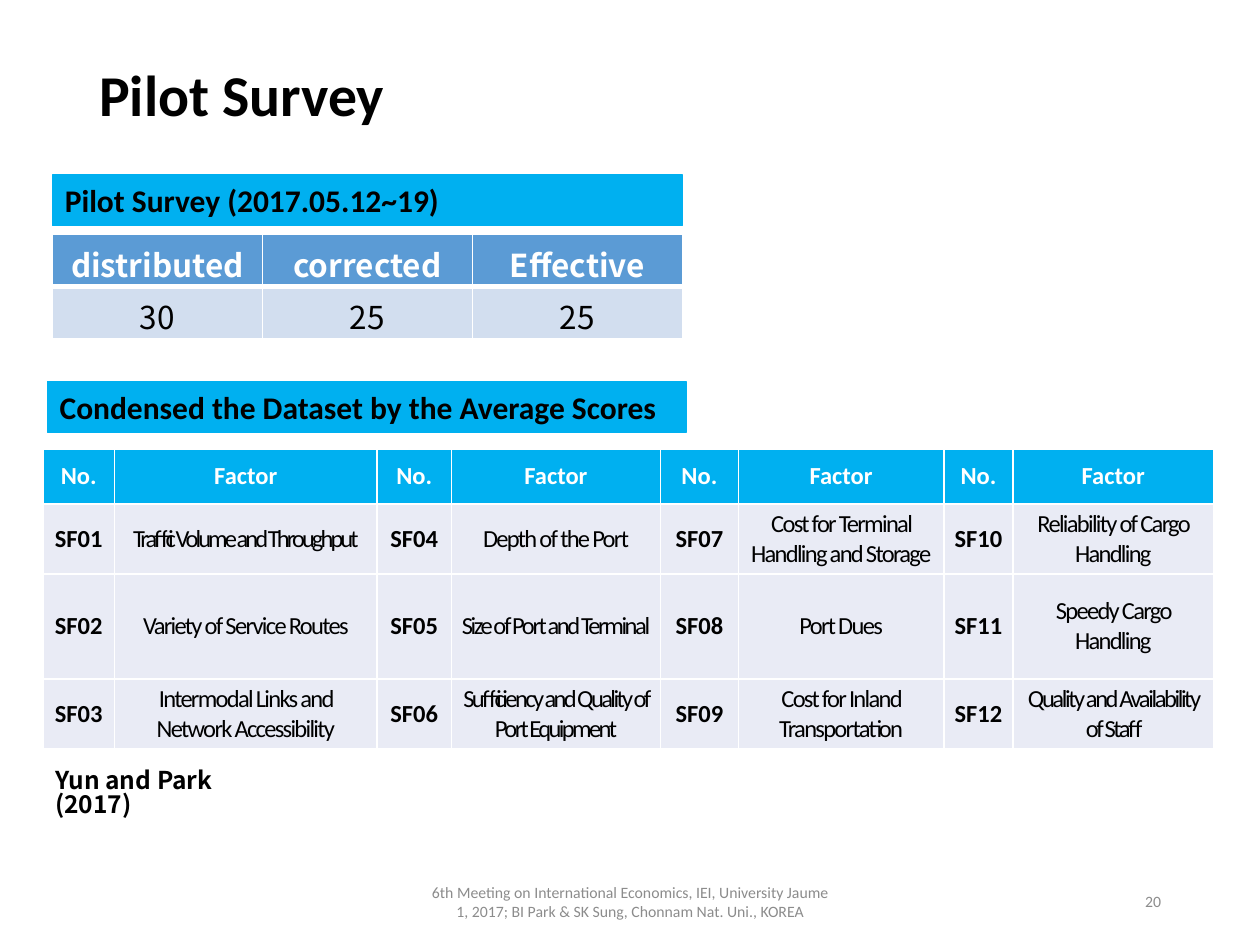
import dataclasses
import typing

import lxml.etree
import pptx
import pptx.dml.color
import pptx.enum.shapes
import pptx.enum.text
import pptx.oxml.ns
import pptx.util

Pt = pptx.util.Pt
RGBColor = pptx.dml.color.RGBColor
Align = pptx.enum.text.PP_ALIGN
Anchor = pptx.enum.text.MSO_ANCHOR

BLACK = RGBColor(0x00, 0x00, 0x00)
WHITE = RGBColor(0xFF, 0xFF, 0xFF)
GREY = RGBColor(0x8C, 0x8C, 0x8C)
CYAN = RGBColor(0x00, 0xB0, 0xF0)
LAVENDER = RGBColor(0xE9, 0xEB, 0xF5)
BLUE = RGBColor(0x5B, 0x9B, 0xD5)
PALE_BLUE = RGBColor(0xD2, 0xDE, 0xEF)

LATIN = "Calibri"
NOTO = "Noto Sans CJK KR"


@dataclasses.dataclass(frozen=True)
class Box:
    left: float
    top: float
    width: float
    height: float

    def lengths(self) -> tuple:
        return tuple(Pt(value) for value in dataclasses.astuple(self))


@dataclasses.dataclass(frozen=True)
class Style:
    size: float
    color: RGBColor = BLACK
    bold: bool = False
    name: str = LATIN
    align: Align = Align.LEFT
    anchor: Anchor = Anchor.TOP
    line_spacing: float = 1.0
    tracking: float = 0


@dataclasses.dataclass(frozen=True)
class Cell:
    text: str
    style: Style
    fill: RGBColor
    bottom_border: float = 1


@dataclasses.dataclass(frozen=True)
class Label:
    text: str
    box: Box
    style: Style


HEADER = Style(14, WHITE, True, align=Align.CENTER, anchor=Anchor.MIDDLE)
NUMBER = dataclasses.replace(HEADER, color=BLACK)
FACTOR = dataclasses.replace(NUMBER, bold=False)
COUNT_HEADER = Style(18, WHITE, True, NOTO, Align.CENTER)
COUNT = dataclasses.replace(COUNT_HEADER, color=BLACK, bold=False)
BANNER = Style(18, bold=True)
FOOTER = Style(9, GREY, align=Align.CENTER, anchor=Anchor.MIDDLE)

# Factor and letter spacing, numbered SF01 to SF12 down the columns
FACTORS = [
    ("Traffic Volume and Throughput", -1.7),
    ("Variety of Service Routes", -1),
    ("Intermodal Links and Network Accessibility", -1),
    ("Depth of the Port", -1),
    ("Size of Port and Terminal", -1.4),
    ("Sufficiency and Quality of Port Equipment", -1.5),
    ("Cost for Terminal Handling and Storage", -1),
    ("Port Dues", -1),
    ("Cost for Inland Transportation", -1),
    ("Reliability of Cargo Handling", -1),
    ("Speedy Cargo Handling", -1),
    ("Quality and Availability of Staff", -1.4),
]
FACTOR_ROWS = 3
FACTOR_COLUMNS = [41, 150, 42.5, 119.5, 44.5, 117.5, 39.5, 114.5]
FACTOR_HEIGHTS = [31.5, 40, 60, 40]
FACTOR_MARGINS = {"margin_left": 5, "margin_right": 5,
                  "margin_top": 1.5, "margin_bottom": 1.5}
COUNT_MARGINS = {"margin_bottom": 0}

BANNERS = [
    Label("Pilot Survey (2017.05.12~19)", Box(30, 100, 360, 29), BANNER),
    Label("Condensed the Dataset by the Average Scores",
          Box(27, 218, 365, 29), BANNER),
]
NOTES = [
    Label("6th Meeting on International Economics, IEI, University Jaume 1, "
          "2017; BI Park & SK Sung, Chonnam Nat. Uni., KOREA",
          Box(238.5, 500.5, 243, 29), FOOTER),
    Label("Yun and Park (2017)", Box(24.5, 436.5, 148.5, 24.5),
          Style(14, bold=True, name=NOTO, line_spacing=0.82)),
    Label("20", Box(508.5, 500.5, 162, 29),
          dataclasses.replace(FOOTER, align=Align.RIGHT)),
]


def write(text_frame: typing.Any, text: str, style: Style) -> None:
    paragraph = text_frame.paragraphs[0]
    paragraph.alignment = style.align
    paragraph.line_spacing = style.line_spacing
    run = paragraph.add_run()
    run.text = text
    font_values = {"size": Pt(style.size), "bold": style.bold, "name": style.name}
    for attribute, value in font_values.items():
        setattr(run.font, attribute, value)
    run.font.color.rgb = style.color
    if style.tracking:
        run.font._element.set("spc", str(round(style.tracking * 100)))


def write_in_shape(shape: typing.Any, label: Label) -> None:
    shape.text_frame.word_wrap = True
    shape.text_frame.vertical_anchor = label.style.anchor
    write(shape.text_frame, label.text, label.style)


def add_borders(cell: typing.Any, bottom_width: float) -> None:
    properties = cell._tc.get_or_add_tcPr()
    qn = pptx.oxml.ns.qn
    widths = {"a:lnL": 1, "a:lnR": 1, "a:lnT": 1, "a:lnB": bottom_width}
    for index, (tag, width) in enumerate(widths.items()):
        line = lxml.etree.Element(qn(tag), w=str(int(Pt(width))))
        fill = lxml.etree.SubElement(line, qn("a:solidFill"))
        lxml.etree.SubElement(fill, qn("a:srgbClr"), val=str(WHITE))
        properties.insert(index, line)


def add_table(slide: typing.Any, left: float, top: float, widths: list[float],
              heights: list[float], rows: list[list[Cell]],
              margins: dict[str, float]) -> None:
    box = Box(left, top, sum(widths), sum(heights))
    table = slide.shapes.add_table(len(rows), len(widths), *box.lengths()).table
    for column, width in zip(table.columns, widths):
        column.width = Pt(width)
    for row_index, (row, height) in enumerate(zip(rows, heights)):
        table.rows[row_index].height = Pt(height)
        for column_index, content in enumerate(row):
            cell = table.cell(row_index, column_index)
            for attribute, value in margins.items():
                setattr(cell, attribute, Pt(value))
            cell.vertical_anchor = content.style.anchor
            cell.fill.solid()
            cell.fill.fore_color.rgb = content.fill
            write(cell.text_frame, content.text, content.style)
            add_borders(cell, content.bottom_border)


def add_banner(slide: typing.Any, label: Label) -> None:
    shape = slide.shapes.add_shape(
        pptx.enum.shapes.MSO_SHAPE.RECTANGLE, *label.box.lengths())
    shape.shadow.inherit = False
    shape.fill.solid()
    shape.fill.fore_color.rgb = CYAN
    shape.line.color.rgb = CYAN
    shape.line.width = Pt(0.75)
    write_in_shape(shape, label)


def factor_rows() -> list[list[Cell]]:
    groups = len(FACTORS) // FACTOR_ROWS
    rows = [[Cell(text, HEADER, CYAN) for text in ("No.", "Factor")] * groups]
    for first in range(FACTOR_ROWS):
        row = []
        for index in range(first, len(FACTORS), FACTOR_ROWS):
            text, tracking = FACTORS[index]
            style = dataclasses.replace(FACTOR, tracking=tracking)
            row += [Cell(f"SF{index + 1:02}", NUMBER, LAVENDER),
                    Cell(text, style, LAVENDER)]
        rows.append(row)
    return rows


def main() -> None:
    presentation = pptx.Presentation()
    presentation.slide_width, presentation.slide_height = Pt(720), Pt(540)
    slide = presentation.slides.add_slide(presentation.slide_layouts[5])

    title = slide.shapes.title
    title_box = Box(49.5, 29, 621, 54)
    title.left, title.top, title.width, title.height = title_box.lengths()
    write_in_shape(title, Label("Pilot Survey", title_box, Style(
        33, bold=True, anchor=Anchor.MIDDLE, line_spacing=0.9)))

    add_table(slide, 24.5, 256.5, FACTOR_COLUMNS, FACTOR_HEIGHTS,
              factor_rows(), FACTOR_MARGINS)
    count_rows = [
        [Cell(text, COUNT_HEADER, BLUE, 3)
         for text in ("distributed", "corrected", "Effective")],
        [Cell(text, COUNT, PALE_BLUE) for text in ("30", "25", "25")],
    ]
    add_table(slide, 30, 134, [120] * 3, [29.25] * 2, count_rows, COUNT_MARGINS)
    for banner in BANNERS:
        add_banner(slide, banner)
    for note in NOTES:
        write_in_shape(slide.shapes.add_textbox(*note.box.lengths()), note)

    presentation.save("out.pptx")


if __name__ == "__main__":
    main()
